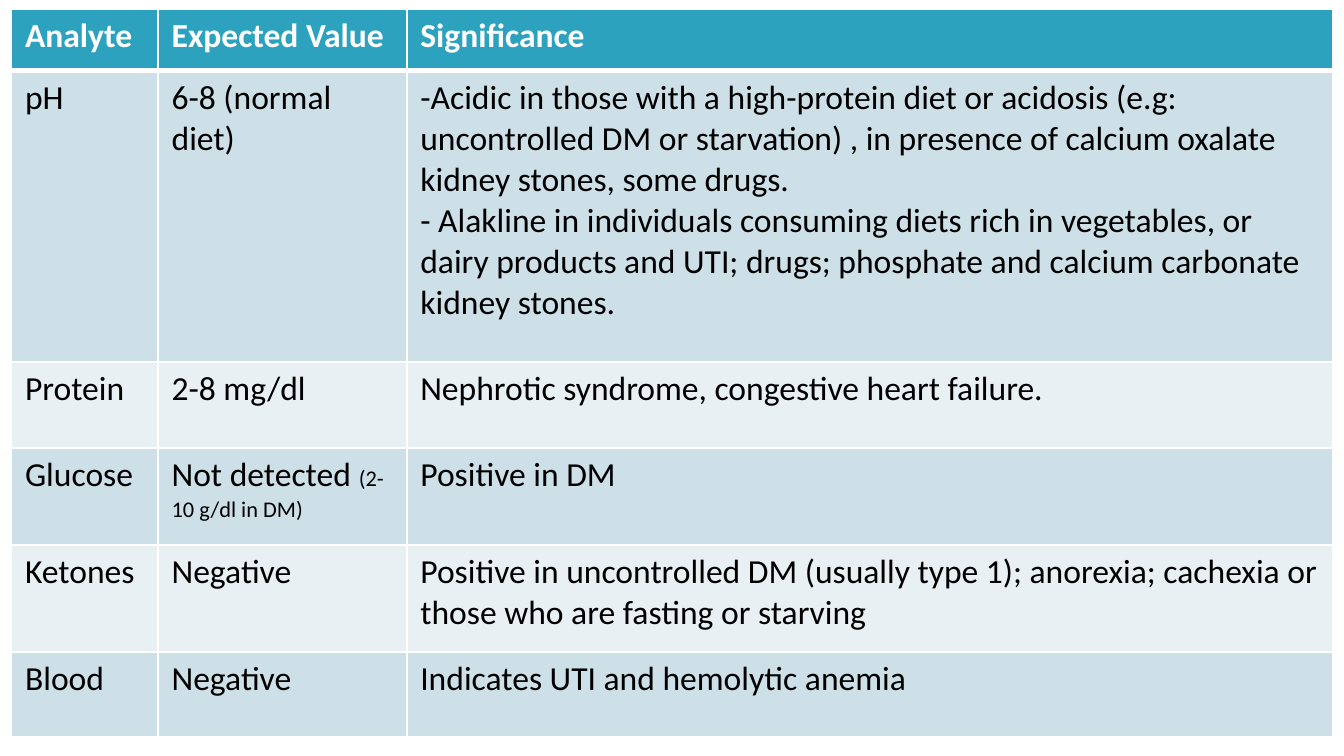
from lxml.etree import SubElement
from pptx import Presentation
from pptx.dml.color import RGBColor
from pptx.oxml.ns import qn
from pptx.util import Cm, Pt

WHITE = RGBColor(0xFF, 0xFF, 0xFF)
BLACK = RGBColor(0x00, 0x00, 0x00)
TEAL = RGBColor(0x2D, 0xA2, 0xBF)
BLUE = RGBColor(0xCD, 0xE0, 0xE8)
PALE = RGBColor(0xE8, 0xF0, 0xF4)

FONT = "Calibri"
BODY, NOTE = 18, 12
WIDTHS = [2.77, 4.7, 17.5]
HEIGHTS = [1.17, 5.5, 1.63, 1.83, 2.03, 1.6]

# A cell is a list of paragraphs, a paragraph a list of (text, size) runs.
ROWS = [
    [[[(head, BODY)]] for head in ("Analyte", "Expected Value", "Significance")],
    [
        [[("pH", BODY)]],
        [[("6-8 (normal diet)", BODY)]],
        [
            [("-Acidic in those with a high-protein diet or acidosis (e.g: "
              "uncontrolled DM or starvation) , in presence of calcium oxalate "
              "kidney stones, some drugs.", BODY)],
            [("- Alakline in individuals consuming diets rich in vegetables, or "
              "dairy products and UTI; drugs; phosphate and calcium carbonate "
              "kidney stones.", BODY)],
        ],
    ],
    [
        [[("Protein", BODY)]],
        [[("2-8 mg/dl", BODY)]],
        [[("Nephrotic syndrome, congestive heart failure.", BODY)]],
    ],
    [
        [[("Glucose", BODY)]],
        [[("Not detected ", BODY), ("(2-10 g/dl in DM)", NOTE)]],
        [[("Positive in DM", BODY)]],
    ],
    [
        [[("Ketones", BODY)]],
        [[("Negative", BODY)]],
        [[("Positive in uncontrolled DM (usually type 1); anorexia; cachexia or "
           "those who are fasting or starving", BODY)]],
    ],
    [
        [[("Blood", BODY)]],
        [[("Negative", BODY)]],
        [[("Indicates UTI and hemolytic anemia", BODY)]],
    ],
]


def add_lines(cell, top, base):
    """Draw white borders; top and base are widths in points."""
    props = cell._tc.get_or_add_tcPr()
    for side, width in (("L", 1), ("R", 1), ("T", top), ("B", base)):
        line = SubElement(props, qn(f"a:ln{side}"), w=str(Pt(width)))
        fill = SubElement(line, qn("a:solidFill"))
        SubElement(fill, qn("a:srgbClr"), val=str(WHITE))


def write(cell, paras, color, bold):
    frame = cell.text_frame
    for i, runs in enumerate(paras):
        para = frame.add_paragraph() if i else frame.paragraphs[0]
        for text, size in runs:
            run = para.add_run()
            run.text = text
            run.font.name = FONT
            run.font.size = Pt(size)
            run.font.bold = bold
            run.font.color.rgb = color


def paint(cell, color):
    cell.fill.solid()
    cell.fill.fore_color.rgb = color


def add_grid(slide):
    frame = slide.shapes.add_table(
        len(ROWS), len(WIDTHS), Cm(0.22), Cm(0.17),
        Cm(sum(WIDTHS)), Cm(sum(HEIGHTS)))
    table = frame.table
    for col, width in zip(table.columns, WIDTHS):
        col.width = Cm(width)
    for r, (row, height) in enumerate(zip(ROWS, HEIGHTS)):
        table.rows[r].height = Cm(height)
        head = r == 0
        shade = TEAL if head else BLUE if r % 2 else PALE
        for c, paras in enumerate(row):
            cell = table.cell(r, c)
            add_lines(cell, 3 if r == 1 else 1, 3 if head else 1)
            paint(cell, shade)
            write(cell, paras, WHITE if head else BLACK, head)


def main():
    deck = Presentation()
    deck.slide_width, deck.slide_height = Cm(25.4), Cm(14.29)
    slide = deck.slides.add_slide(deck.slide_layouts[6])
    add_grid(slide)
    deck.save("out.pptx")


if __name__ == "__main__":
    main()
